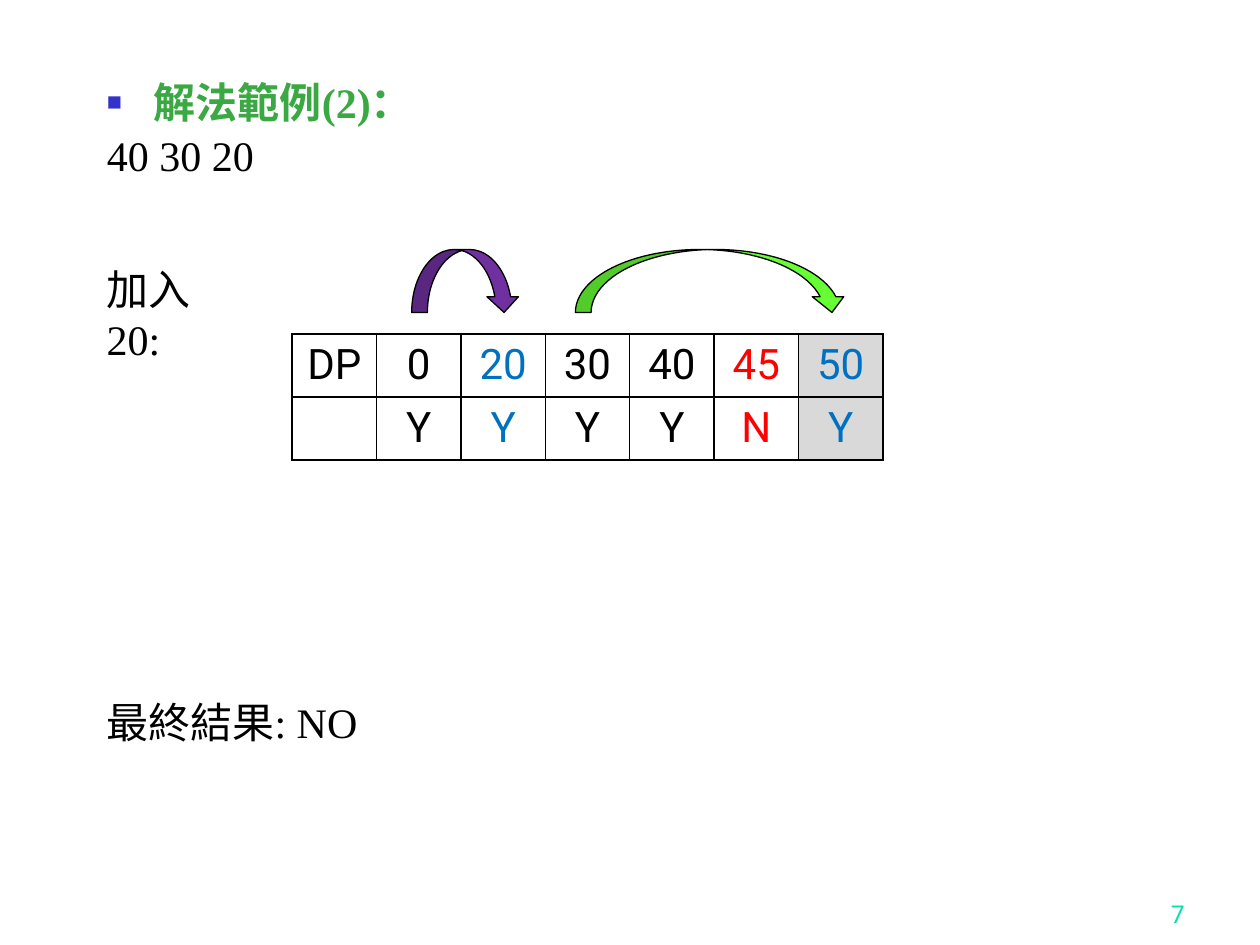
from lxml import etree
from pptx import Presentation
from pptx import util as u
from pptx.dml.color import RGBColor
from pptx.enum import shapes, text
from pptx.oxml.ns import qn

BLACK, BLUE, RED, GREY = "000000", "0070C0", "FF0000", "D9D9D9"
SERIF, SANS = "Times New Roman", "Roboto"
COLUMNS = [  # value, reachable, text colour, fill
    ("DP", "", BLACK, None),
    ("0", "Y", BLACK, None),
    ("20", "Y", BLUE, None),
    ("30", "Y", BLACK, None),
    ("40", "Y", BLACK, None),
    ("45", "N", RED, None),
    ("50", "Y", BLUE, GREY),
]


def color(value):
    return RGBColor.from_string(value)


def add_xml(parent, tag, **attributes):
    return etree.SubElement(parent, qn(tag), attributes)


class SlideBuilder:
    base = {"size": u.Pt(24), "name": SERIF, "bold": False}

    def __init__(self, slide):
        self.slide = slide

    def add_words(self, paragraph, words, ink=BLACK, layout=None, **font):
        run = paragraph.add_run()
        run.text = words
        for name, value in {**self.base, **font}.items():
            setattr(run.font, name, value)
        run.font.color.rgb = color(ink)
        for name, value in (layout or {}).items():
            setattr(paragraph, name, value)

    def body(self, box, heading, line):
        """Fill the body placeholder with a bulleted heading and a plain line."""
        title = self.slide.shapes.title.element
        title.getparent().remove(title)
        body = self.slide.placeholders[1]
        body.left, body.top, body.width, body.height = map(u.Cm, box)
        frame = body.text_frame
        frame.auto_size = text.MSO_AUTO_SIZE.NONE
        first, second = frame.paragraphs[0], frame.add_paragraph()
        before = u.Pt(4.8)
        self.add_words(first, heading, "3BA943",
                       {"line_spacing": 1.5, "space_before": before}, bold=True)
        self.add_words(second, line, layout={"line_spacing": 0.9, "space_before": before})

        properties = first._p.get_or_add_pPr()
        properties.set("marL", str(u.Cm(0.95)))
        properties.set("indent", str(u.Cm(-0.95)))
        add_xml(add_xml(properties, "a:buClr"), "a:srgbClr", val="3333CC")
        add_xml(properties, "a:buSzPct", val="60000")
        add_xml(properties, "a:buChar", char="■")
        properties = second._p.get_or_add_pPr()
        properties.set("marL", "0")
        properties.set("indent", "0")
        add_xml(properties, "a:buNone")

    def label(self, box, words, ink=BLACK, anchor=text.MSO_ANCHOR.TOP, layout=None, **font):
        frame = self.slide.shapes.add_textbox(*map(u.Cm, box)).text_frame
        frame.word_wrap = True
        frame.vertical_anchor = anchor
        self.add_words(frame.paragraphs[0], words, ink, layout, **font)

    def arc_arrow(self, left, width, fill):
        arrow = self.slide.shapes.add_shape(
            shapes.MSO_SHAPE.CURVED_DOWN_ARROW, *map(u.Cm, (left, 5.03, width, 1.27)))
        arrow.shadow.inherit = False
        arrow.fill.solid()
        arrow.fill.fore_color.rgb = color(fill)
        arrow.line.color.rgb = color(BLACK)
        arrow.line.width = u.Pt(0.75)

    def cell(self, cell, words, ink, fill):
        properties = cell._tc.get_or_add_tcPr()
        for side in ("a:lnL", "a:lnR", "a:lnT", "a:lnB"):
            border = add_xml(properties, side, w=str(u.Pt(1)))
            add_xml(add_xml(border, "a:solidFill"), "a:srgbClr", val=BLACK)
        if fill:
            cell.fill.solid()
            cell.fill.fore_color.rgb = color(fill)
        else:
            cell.fill.background()
        cell.vertical_anchor = text.MSO_ANCHOR.MIDDLE
        if words:
            self.add_words(cell.text_frame.paragraphs[0], words, ink,
                           {"alignment": text.PP_ALIGN.CENTER}, name=SANS)

    def table(self, box, columns):
        table = self.slide.shapes.add_table(2, len(columns), *map(u.Cm, box)).table
        table.first_row = table.horz_banding = False
        for index, (value, reachable, ink, fill) in enumerate(columns):
            for row, words in enumerate((value, reachable)):
                self.cell(table.cell(row, index), words, ink, fill)


def main():
    presentation = Presentation()
    presentation.slide_width, presentation.slide_height = u.Cm(25.4), u.Cm(19.05)
    builder = SlideBuilder(presentation.slides.add_slide(presentation.slide_layouts[1]))

    builder.body((1.9, 0.91, 8.23, 3.68), "解法範例(2)：", "40 30 20")
    builder.label((1.9, 5.18, 3.2, 1.27), "加入20:")
    builder.arc_arrow(8.3, 2.18, "7030A0")
    builder.table((5.89, 6.73, 11.91, 2.06), COLUMNS)
    builder.arc_arrow(11.6, 5.49, "66FF33")
    builder.label((1.9, 13.92, 5.6, 1.27), "最終結果: NO")
    builder.label((18.85, 17.58, 5.28, 1.27), "7", "00E4A8", text.MSO_ANCHOR.BOTTOM,
                  {"alignment": text.PP_ALIGN.RIGHT}, name=SANS, size=u.Pt(14))

    presentation.save("out.pptx")


if __name__ == "__main__":
    main()
